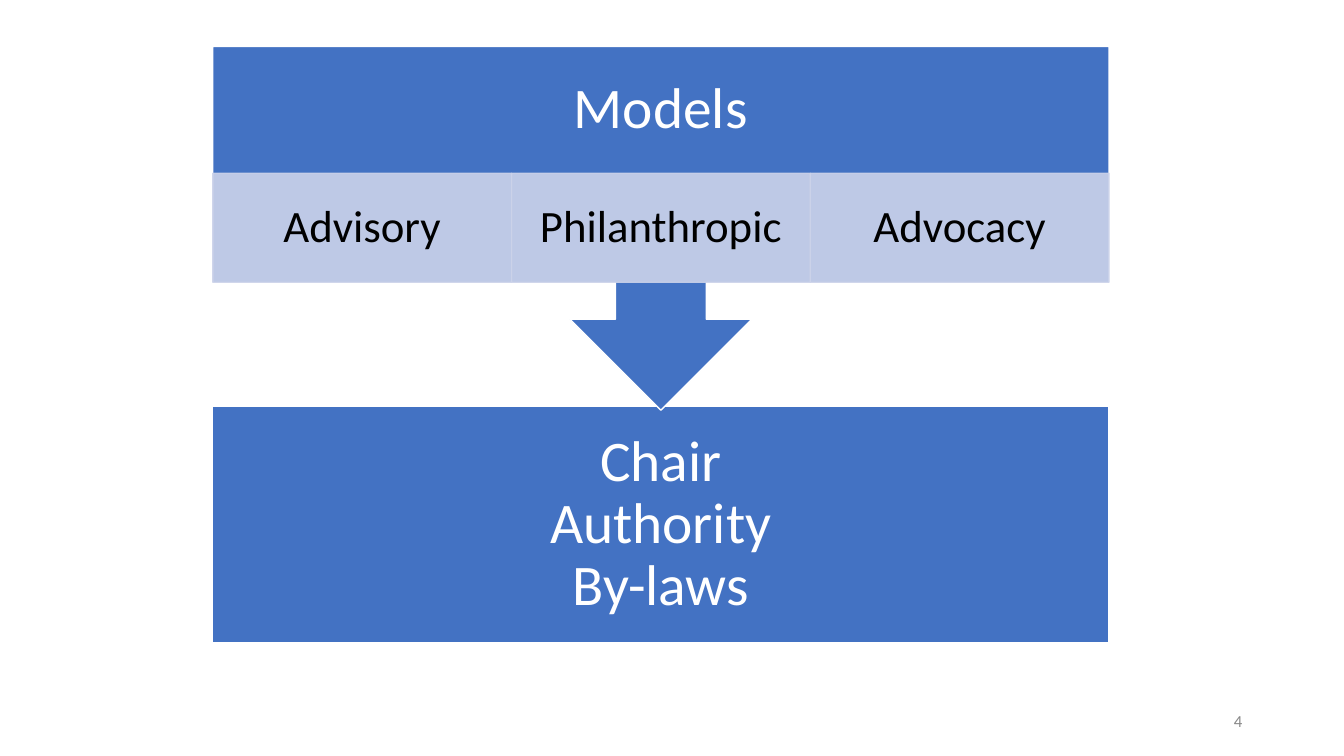
from collections import namedtuple
from dataclasses import dataclass

from lxml import etree
from pptx import Presentation
from pptx.dml.color import RGBColor
from pptx.enum.shapes import MSO_SHAPE as Shape
from pptx.enum.text import MSO_ANCHOR as Anchor, PP_ALIGN as Align
from pptx.oxml.ns import qn
from pptx.util import Inches, Pt

Box = namedtuple("Box", "left top width height")


@dataclass(frozen=True)
class Theme:
    font: str = "Calibri"
    blue: str = "4372C3"
    pale: str = "CCD3EA"
    white: str = "FFFFFF"
    black: str = "000000"
    grey: str = "888888"
    heading: int = 41
    label: int = 32
    footer: int = 12
    outline: int = 1
    tile_opacity: int = 90


THEME = Theme()


def place(box):
    return [Inches(length) for length in box]


def write(shape, text, size, color, margins, align=Align.CENTER, spacing=0.9):
    """Fill a shape with text; margins run left, top, right, bottom."""
    frame = shape.text_frame
    frame.word_wrap = True
    frame.vertical_anchor = Anchor.MIDDLE
    (frame.margin_left, frame.margin_top,
     frame.margin_right, frame.margin_bottom) = place(margins)
    frame.text = text
    for para in frame.paragraphs:
        para.alignment = align
        para.line_spacing = spacing
        for span in para.runs:
            span.font.name = THEME.font
            span.font.size = Pt(size)
            span.font.color.rgb = RGBColor.from_string(color)


def add_block(page, kind, box, fill, line):
    block = page.shapes.add_shape(kind, *place(box))
    block.shadow.inherit = False
    block.fill.solid()
    block.fill.fore_color.rgb = RGBColor.from_string(fill)
    block.line.color.rgb = RGBColor.from_string(line)
    block.line.width = Pt(THEME.outline)
    return block


def set_opacity(shape, percent):
    """Make both the fill and the outline translucent."""
    for color in shape.fill._xPr.iter(qn("a:srgbClr")):
        etree.SubElement(color, qn("a:alpha")).set("val", str(percent * 1000))


def add_outcomes(page, box, lines):
    block = add_block(page, Shape.RECTANGLE, box, THEME.blue, THEME.white)
    write(block, "\n".join(lines), THEME.heading, THEME.white, [0.32] * 4)


def add_models(page, box, heading, models):
    tile_top, tile_height = 1.26, 1.08

    # Callout with its arrow; the lower margin keeps the heading above the tiles
    callout = add_block(page, Shape.DOWN_ARROW_CALLOUT, box, THEME.blue, THEME.white)
    for index, ratio in enumerate((0.25, 0.25, 0.25, 0.65)):
        callout.adjustments[index] = ratio
    write(callout, heading, THEME.heading, THEME.white,
          (0.32, 0.32, 0.32, tile_height + 0.32))

    # Row of equal tiles
    width = box.width / len(models)
    for index, model in enumerate(models):
        tile_box = Box(box.left + index * width, box.top + tile_top, width, tile_height)
        tile = add_block(page, Shape.RECTANGLE, tile_box, THEME.pale, THEME.pale)
        set_opacity(tile, THEME.tile_opacity)
        write(tile, model, THEME.label, THEME.black, (0.25, 0.04, 0.25, 0.04))


def add_page_number(page, box, number):
    footer = page.shapes.add_textbox(*place(box))
    write(footer, number, THEME.footer, THEME.grey, (0.1, 0.05, 0.1, 0.05),
          Align.RIGHT, 1.0)


def main():
    deck = Presentation()
    deck.slide_width, deck.slide_height = Inches(13.33), Inches(7.5)
    page = deck.slides.add_slide(deck.slide_layouts[6])

    add_outcomes(page, Box(2.11, 4.03, 8.89, 2.35), ("Chair", "Authority", "By-laws"))
    add_models(page, Box(2.11, 0.46, 8.89, 3.61), "Models",
               ("Advisory", "Philanthropic", "Advocacy"))
    add_page_number(page, Box(9.42, 6.95, 3, 0.4), "4")
    deck.save("out.pptx")


if __name__ == "__main__":
    main()
